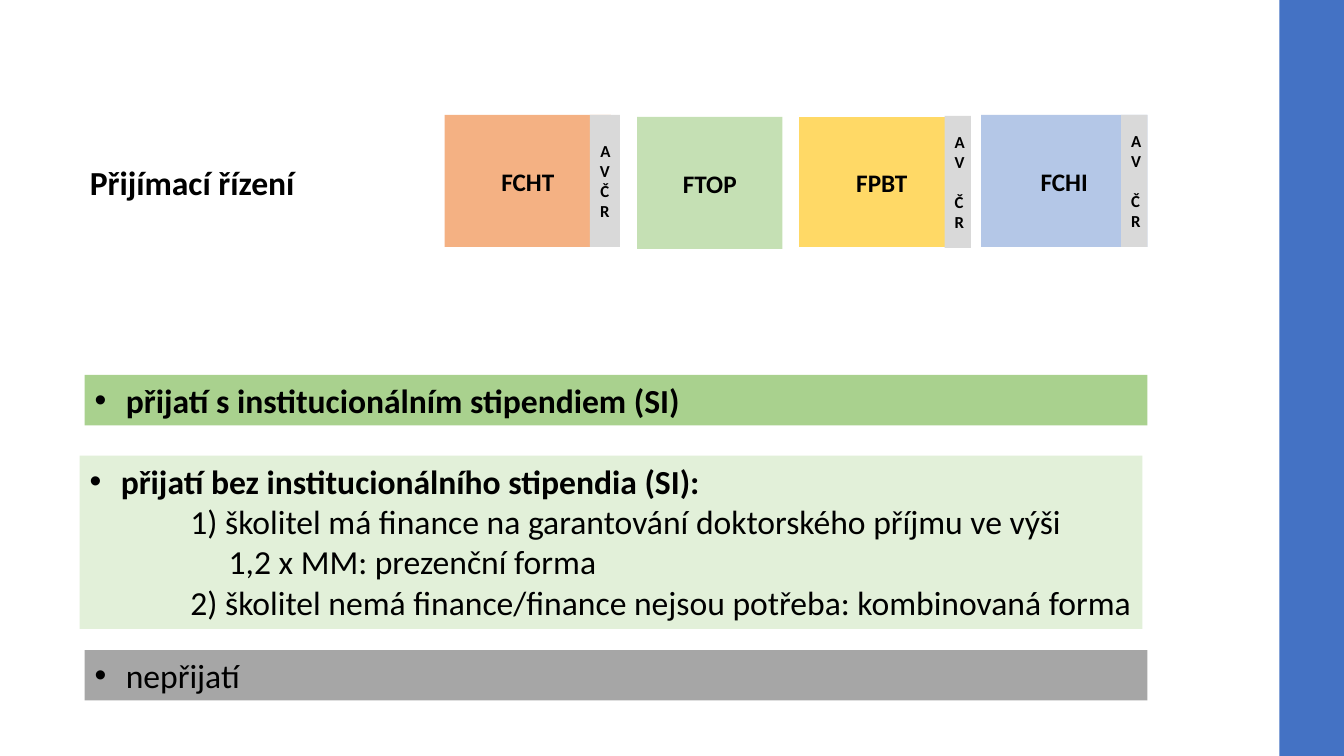
"""Build the slide on admission results and scholarships."""
from dataclasses import dataclass

from lxml import etree
from pptx import Presentation
from pptx import util as u
from pptx.dml.color import RGBColor
from pptx.enum import shapes, text
from pptx.oxml import ns


@dataclass(frozen=True)
class Theme:
    """Hold the colours, font and type sizes."""
    font: str = "Calibri"
    ink: str = "000000"
    white: str = "FFFFFF"
    bar: str = "4472C4"
    academy: str = "D9D9D9"
    fcht: str = "F4B183"
    ftop: str = "C5E0B4"
    fpbt: str = "FFD966"
    fchi: str = "B4C7E7"
    funded: str = "A9D18E"
    unfunded: str = "E2F0D9"
    rejected: str = "A6A6A6"
    body: int = 24
    label: int = 18
    small: int = 12


THEME = Theme()


def style(p, size, bold=False):
    """Format every run of a paragraph."""
    for r in p.runs:
        r.font.name = THEME.font
        r.font.size = u.Pt(size)
        r.font.bold = bold
        r.font.color.rgb = RGBColor.from_string(THEME.ink)


def indent(p, margin, first):
    """Set the left margin and first-line indent of a paragraph."""
    pPr = p._p.get_or_add_pPr()
    pPr.set("marL", str(u.Inches(margin)))
    pPr.set("indent", str(u.Inches(first)))
    return pPr


def add_bullet(p):
    """Give a paragraph a round bullet with a hanging indent."""
    pPr = indent(p, 0.31, -0.31)
    etree.SubElement(pPr, ns.qn("a:buFont")).set("typeface", "Arial")
    etree.SubElement(pPr, ns.qn("a:buChar")).set("char", "•")


def add_block(s, left, top, width, height, fill, line=None):
    """Add a flat rectangle."""
    sp = s.shapes.add_shape(shapes.MSO_SHAPE.RECTANGLE, u.Inches(left), u.Inches(top),
                            u.Inches(width), u.Inches(height))
    sp.shadow.inherit = False
    sp.fill.solid()
    sp.fill.fore_color.rgb = RGBColor.from_string(fill)
    if line:
        sp.line.color.rgb = RGBColor.from_string(line)
        sp.line.width = u.Pt(1)
    else:
        sp.line.fill.background()
    return sp


def add_label(s, label, size, *box, line=None):
    """Add a rectangle with a bold centred label."""
    tf = add_block(s, *box, line=line).text_frame
    tf.word_wrap = True
    tf.vertical_anchor = text.MSO_ANCHOR.MIDDLE
    p = tf.paragraphs[0]
    p.text = label
    p.alignment = text.PP_ALIGN.CENTER
    style(p, size, True)


def add_outcome(s, left, top, height, fill, heading, bold=True, cases=()):
    """Add a band with a bulleted outcome and its numbered cases."""
    tf = add_block(s, left, top, 10.54, height, fill).text_frame
    tf.word_wrap = True
    tf.margin_right = u.Inches(0.05)
    tf.vertical_anchor = text.MSO_ANCHOR.TOP
    p = tf.paragraphs[0]
    p.text = heading
    p.alignment = text.PP_ALIGN.LEFT
    add_bullet(p)
    style(p, THEME.body, bold)
    for case in cases:
        p = tf.add_paragraph()
        p.text = case
        p.alignment = text.PP_ALIGN.LEFT
        indent(p, 1.38, -0.38)
        style(p, THEME.body)


def set_title(s, title):
    """Place and format the slide title."""
    sp = s.shapes.title
    sp.left, sp.top = u.Inches(0.79), u.Inches(1.56)
    sp.width, sp.height = u.Inches(3.5), u.Inches(0.91)
    tf = sp.text_frame
    tf.text = title
    tf.word_wrap = True
    tf.auto_size = text.MSO_AUTO_SIZE.NONE
    tf.vertical_anchor = text.MSO_ANCHOR.TOP
    p = tf.paragraphs[0]
    p.alignment = text.PP_ALIGN.LEFT
    style(p, THEME.body, True)


def main():
    """Build and save the slide."""
    prs = Presentation()
    prs.slide_width, prs.slide_height = u.Inches(13.33), u.Inches(7.5)
    s = prs.slides.add_slide(prs.slide_layouts[5])
    set_title(s, "Přijímací řízení")

    faculties = [
        ("FCHT", 4.41, 1.14, 1.65, THEME.fcht, None),
        ("FTOP", 6.32, 1.16, 1.44, THEME.ftop, None),
        ("FPBT", 7.92, 1.15, 1.65, THEME.fpbt, THEME.white),
        ("FCHI", 9.73, 1.14, 1.65, THEME.fchi, None),
    ]
    for name, left, top, width, fill, line in faculties:
        add_label(s, name, THEME.label, left, top, width, 1.31, fill, line=line)
    for left, top, width in [(5.85, 1.14, 0.3), (9.37, 1.15, 0.26), (11.12, 1.14, 0.26)]:
        add_label(s, "AV ČR", THEME.small, left, top, width, 1.31, THEME.academy)

    add_outcome(s, 0.84, 3.72, 0.5, THEME.funded, "přijatí s institucionálním stipendiem (SI)")
    add_outcome(s, 0.79, 4.52, 1.72, THEME.unfunded,
                "přijatí bez institucionálního stipendia (SI):",
                cases=["1) školitel má finance na garantování doktorského příjmu ve výši\v"
                       "1,2 x MM: prezenční forma",
                       "2) školitel nemá finance/finance nejsou potřeba: kombinovaná forma"])
    add_outcome(s, 0.84, 6.45, 0.5, THEME.rejected, "nepřijatí", bold=False)
    add_block(s, 12.69, 0, 0.64, 7.5, THEME.bar)
    prs.save("out.pptx")


if __name__ == "__main__":
    main()
